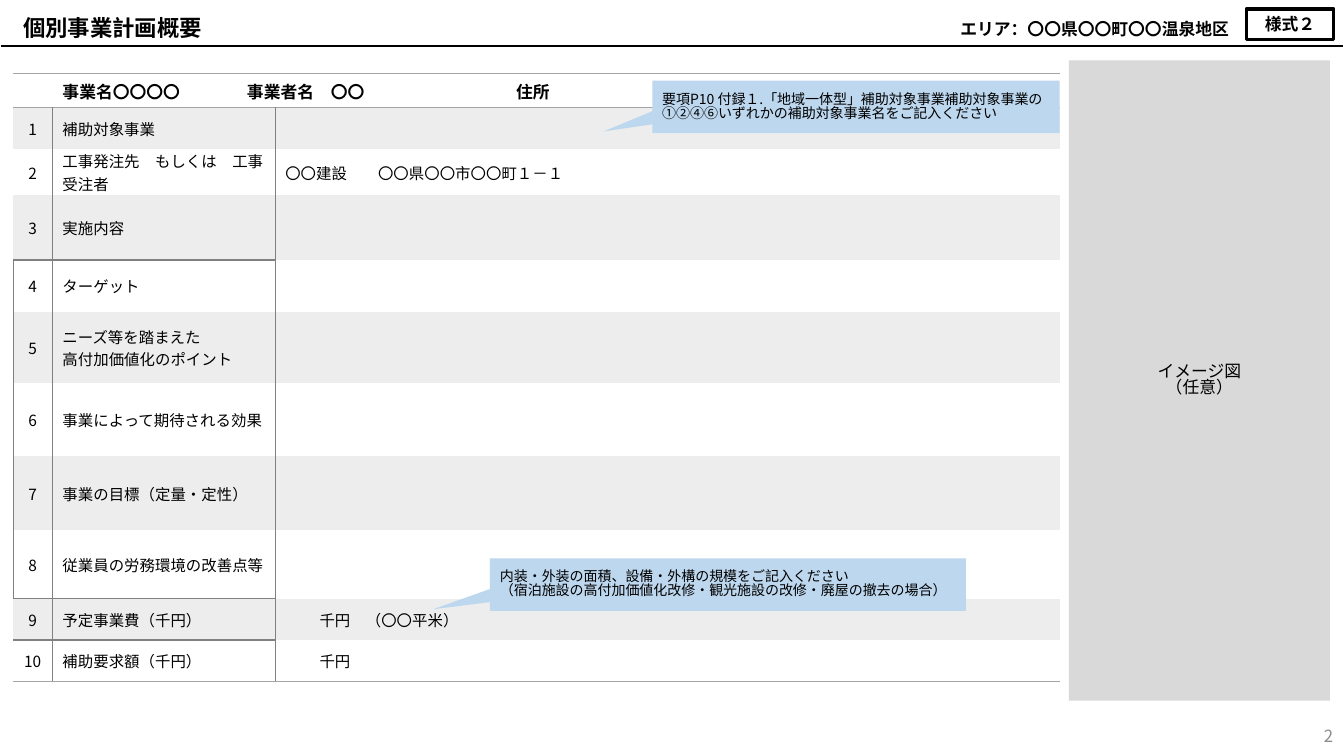
from dataclasses import dataclass

from lxml.etree import SubElement
from pptx import Presentation
from pptx.dml.color import RGBColor
from pptx.enum.shapes import MSO_CONNECTOR, MSO_SHAPE as Preset
from pptx.enum.text import MSO_ANCHOR as Anchor, MSO_AUTO_SIZE as Fit, PP_ALIGN as Align
from pptx.oxml.ns import qn
from pptx.util import Inches, Pt

BLACK = RGBColor(0, 0, 0)
WHITE = RGBColor(255, 255, 255)
BAND = RGBColor(0xED, 0xED, 0xED)
RULE = RGBColor(0xA5, 0xA5, 0xA5)
DARK = RGBColor(0x80, 0x80, 0x80)
PALE = RGBColor(0xBD, 0xD7, 0xEE)
PANEL = RGBColor(0xD9, 0xD9, 0xD9)
FAINT = RGBColor(0x8C, 0x8C, 0x8C)
FACE = "Noto Sans CJK JP"
NO_GRID = "{2D5ABB26-0587-4C30-8999-92F81FD0307C}"


@dataclass
class Style:
    size: float
    bold: bool = False
    color: RGBColor = BLACK
    align: Align = Align.LEFT
    lead: float = 1.0


@dataclass
class Row:
    height: float
    label: str
    entry: str = ""
    indent: float = 0.1
    tabs: tuple[float, ...] = ()


@dataclass
class Edge:
    side: str
    rows: range
    cols: range
    color: RGBColor = DARK
    width: float = 1


@dataclass
class Box:
    preset: Preset
    at: tuple[float, float, float, float]
    text: str
    style: Style
    fill: RGBColor | None = None
    line: float = 0


ROWS = [
    Row(0.41, "補助対象事業"),
    Row(0.46, "工事発注先　もしくは　工事受注者", "〇〇建設\t〇〇県〇〇市〇〇町１－１", tabs=(0.92,)),
    Row(0.64, "実施内容"),
    Row(0.52, "ターゲット"),
    Row(0.7, "ニーズ等を踏まえた\n高付加価値化のポイント"),
    Row(0.73, "事業によって期待される効果"),
    Row(0.73, "事業の目標（定量・定性）"),
    Row(0.68, "従業員の労務環境の改善点等"),
    Row(0.41, "予定事業費（千円）", "千円　（〇〇平米）", 0.44),
    Row(0.41, "補助要求額（千円）", "千円", 0.44),
]
ALL, MID = range(1, 11), range(4, 9)
FULL, HEAD = range(3), range(2)
# Sides run L, R, T, B, the order the schema asks for within a cell.
EDGES = [
    Edge("L", MID, range(1)),
    Edge("R", ALL, range(1), width=0.5),
    Edge("R", range(1, 4), range(1, 2), width=0.5),
    Edge("R", MID, range(1, 2)),
    Edge("R", range(9, 11), range(1, 2), width=0.5),
    Edge("T", range(1), FULL, RULE),
    Edge("B", range(1), FULL, RULE),
    Edge("B", range(3, 4), HEAD),
    Edge("B", range(8, 10), HEAD),
    Edge("B", range(10, 11), FULL, RULE),
]
NOTE = Style(10, lead=0.83)
BOXES = [
    Box(Preset.RECTANGLE, (12.36, 0.09, 0.87, 0.3), "様式２",
        Style(12, True, align=Align.CENTER), line=2.25),
    Box(Preset.RECTANGULAR_CALLOUT, (6.47, 0.8, 4.04, 0.52),
        "要項P10 付録１.「地域一体型」補助対象事業補助対象事業の①②④⑥いずれかの補助対象事業名をご記入ください",
        NOTE, PALE),
    Box(Preset.RECTANGLE, (10.6, 0.6, 2.59, 6.35), "イメージ図\n（任意）",
        Style(12, align=Align.CENTER, lead=0.83), PANEL),
    Box(Preset.RECTANGULAR_CALLOUT, (4.86, 5.54, 4.72, 0.52),
        "内装・外装の面積、設備・外構の規模をご記入ください\n"
        "（宿泊施設の高付加価値化改修・観光施設の改修・廃屋の撤去の場合）",
        NOTE, PALE),
]


def write(frame, text: str, style: Style, tabs: tuple[float, ...] = ()) -> None:
    frame.text = text
    frame.word_wrap = True
    for para in frame.paragraphs:
        para.alignment = style.align
        if style.lead != 1:
            para.line_spacing = style.lead
        font = para.font
        font.name, font.size, font.bold = FACE, Pt(style.size), style.bold
        font.color.rgb = style.color
        props = para._p.pPr.find(qn("a:defRPr"))
        SubElement(props, qn("a:ea")).set("typeface", FACE)
        if tabs:
            stops = SubElement(para._p.pPr, qn("a:tabLst"))
            for pos in tabs:
                stop = SubElement(stops, qn("a:tab"))
                stop.set("pos", str(Inches(pos)))
                stop.set("algn", "l")
            props.addprevious(stops)


def fill_cell(cell, text: str, style: Style, tabs: tuple[float, ...] = ()) -> None:
    write(cell.text_frame, text, style, tabs)
    cell.vertical_anchor = Anchor.MIDDLE
    cell.margin_top = cell.margin_bottom = 0


def draw_edge(table, edge: Edge) -> None:
    for row in edge.rows:
        for col in edge.cols:
            props = table.cell(row, col)._tc.get_or_add_tcPr()
            line = SubElement(props, qn(f"a:ln{edge.side}"))
            line.set("w", str(Pt(edge.width)))
            paint = SubElement(line, qn("a:solidFill"))
            SubElement(paint, qn("a:srgbClr")).set("val", str(edge.color))


def add_plan(slide) -> None:
    frame = slide.shapes.add_table(
        len(ROWS) + 1, 3, Inches(0.13), Inches(0.73), Inches(10.38), Inches(6.03))
    frame.element.find(f".//{qn('a:tableStyleId')}").text = NO_GRID
    table = frame.table
    table.first_row = table.horz_banding = False
    for col, width in zip(table.columns, (0.39, 2.21, 7.78)):
        col.width = Inches(width)
    for edge in EDGES:
        draw_edge(table, edge)
    table.rows[0].height = Inches(0.34)
    table.cell(0, 1).merge(table.cell(0, 2))
    fill_cell(table.cell(0, 0), "", Style(12))
    fill_cell(table.cell(0, 1), "事業名〇〇〇〇\t事業者名　〇〇\t住所", Style(12, True), (1.83, 4.5))
    for num, row in enumerate(ROWS, 1):
        table.rows[num].height = Inches(row.height)
        mark, label, entry = (table.cell(num, col) for col in FULL)
        fill_cell(mark, str(num), Style(11, align=Align.CENTER))
        fill_cell(label, row.label, Style(11))
        fill_cell(entry, row.entry, Style(11), row.tabs)
        entry.margin_left = Inches(row.indent)
        for cell in (mark, label, entry):
            cell.fill.solid()
            cell.fill.fore_color.rgb = BAND if num % 2 else WHITE


def add_box(slide, box: Box) -> None:
    shape = slide.shapes.add_shape(box.preset, *map(Inches, box.at))
    shape.shadow.inherit = False
    if box.fill is None:
        shape.fill.background()
    else:
        shape.fill.solid()
        shape.fill.fore_color.rgb = box.fill
    if box.line:
        shape.line.color.rgb = BLACK
        shape.line.width = Pt(box.line)
    else:
        shape.line.fill.background()
    if box.preset == Preset.RECTANGULAR_CALLOUT:
        shape.adjustments[0], shape.adjustments[1] = -0.62, 0.47
    write(shape.text_frame, box.text, box.style)
    shape.text_frame.vertical_anchor = Anchor.MIDDLE


def add_text(slide, at: tuple[float, ...], text: str, style: Style, anchor: Anchor) -> None:
    frame = slide.shapes.add_textbox(*map(Inches, at)).text_frame
    write(frame, text, style)
    frame.vertical_anchor = anchor


def main() -> None:
    deck = Presentation()
    deck.slide_width, deck.slide_height = Inches(13.33), Inches(7.5)
    slide = deck.slides.add_slide(deck.slide_layouts[5])
    title = slide.shapes.title
    title.left, title.top, title.width, title.height = map(Inches, (0.13, 0.09, 13, 0.37))
    write(title.text_frame, "個別事業計画概要", Style(16, True))
    title.text_frame.auto_size = Fit.NONE
    title.text_frame.vertical_anchor = Anchor.MIDDLE
    rule = slide.shapes.add_connector(
        MSO_CONNECTOR.STRAIGHT, Inches(0.01), Inches(0.46), Inches(13.32), Inches(0.46))
    rule.line.color.rgb = BLACK
    rule.line.width = Pt(1.5)
    SubElement(rule.element.spPr, qn("a:effectLst"))
    add_plan(slide)
    add_text(slide, (10.32, 7.1, 3, 0.4), "2",
             Style(12, color=FAINT, align=Align.RIGHT), Anchor.MIDDLE)
    add_text(slide, (8.96, 0.08, 3.33, 0.38), "エリア：〇〇県〇〇町〇〇温泉地区",
             Style(12, True, align=Align.RIGHT, lead=1.3), Anchor.TOP)
    for box in BOXES:
        add_box(slide, box)
    deck.save("out.pptx")


if __name__ == "__main__":
    main()
